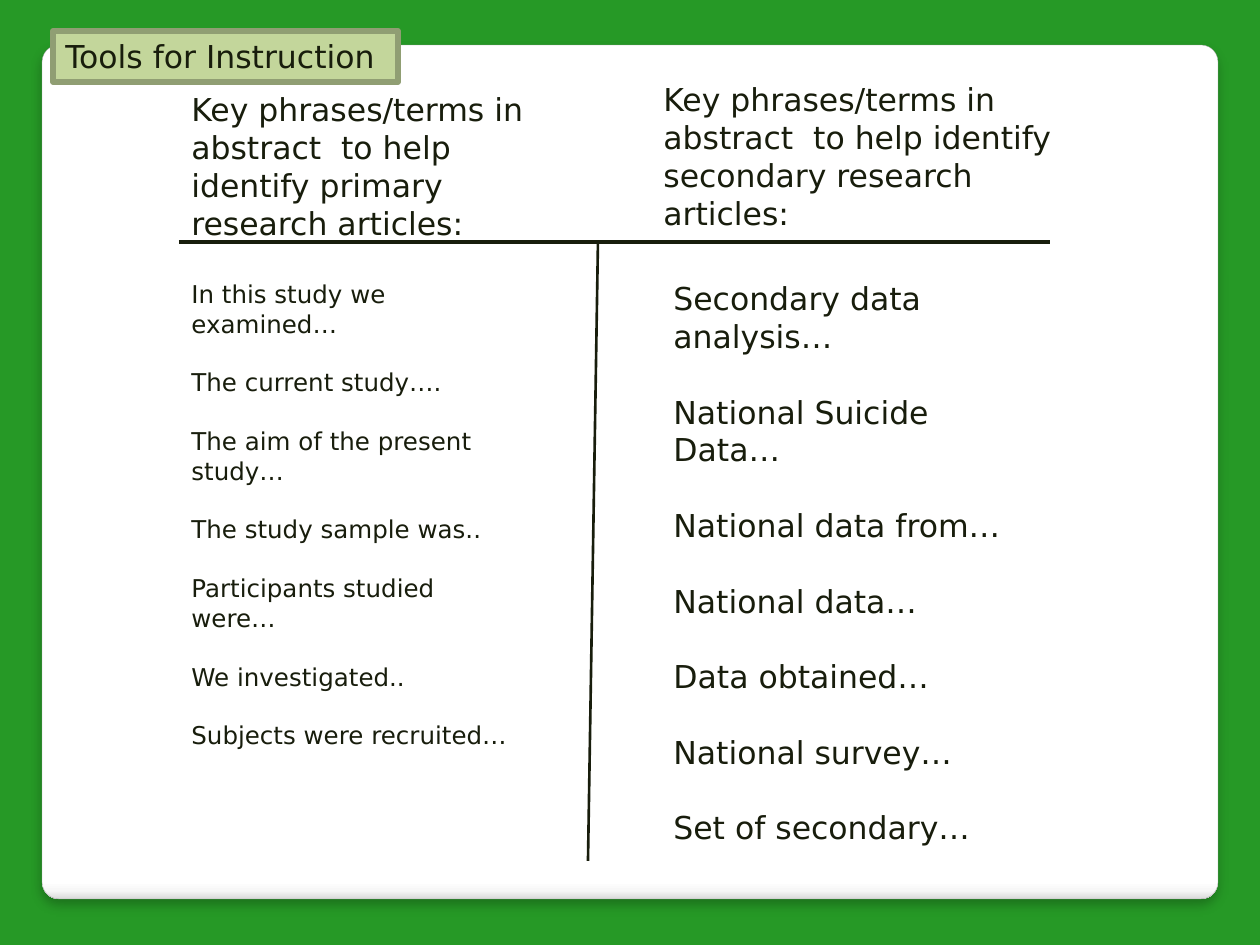
"""Build the two-column slide of phrases that identify research articles."""
from lxml.etree import SubElement
from pptx import Presentation
from pptx.dml.color import RGBColor as Color
from pptx.enum.shapes import MSO_CONNECTOR as Connector, MSO_SHAPE as Preset
from pptx.enum.text import MSO_ANCHOR as Anchor, PP_ALIGN as Align
from pptx.oxml import parse_xml
from pptx.oxml.ns import nsdecls, qn
from pptx.util import Emu, Pt

EMU_PER_PX = 914400 / 126
FONT = "DejaVu Sans"
LINE_PITCH = 1.2
COLORS = {
    "page": "269926",
    "white": "FFFFFF",
    "pale": "F7F7F7",
    "edge": "DADADA",
    "outline": "A4A4A4",
    "ink": "181D0C",
    "label": "C3D69B",
    "label_line": "909E73",
}
PANEL_STOPS = [(0, "white"), (98, "white"), (99, "pale"), (100, "edge")]
HEADING = "Key phrases/terms in abstract  to help identify {} research articles:"
PRIMARY = [
    "In this study we examined…",
    "The current study….",
    "The aim of the present study…",
    "The study sample was..",
    "Participants studied were…",
    "We investigated..",
    "Subjects were recruited…",
]
SECONDARY = [
    "Secondary data analysis…",
    "National Suicide Data…",
    "National data from…",
    "National data…",
    "Data obtained…",
    "National survey…",
    "Set of secondary…",
]


def px(*lengths):
    """Turn pixel lengths into a list of EMU lengths."""
    return [Emu(round(length * EMU_PER_PX)) for length in lengths]


def color(name):
    """Return the named colour."""
    return Color.from_string(COLORS[name])


def set_values(target, values):
    """Set each attribute of the target from a dict."""
    for name, value in values.items():
        setattr(target, name, value)


def set_line(line, name, width):
    """Give a line its colour and its width in points."""
    line.color.rgb = color(name)
    line.width = Pt(width)


def write_text(frame, texts, size, wrap=True):
    """Write spaced paragraphs, one for each text."""
    set_values(frame, {"word_wrap": wrap, "vertical_anchor": Anchor.TOP})
    for index, text in enumerate(texts):
        para = frame.add_paragraph() if index else frame.paragraphs[0]
        gap = Pt(size * LINE_PITCH) if index else Pt(0)
        set_values(para, {"alignment": Align.LEFT, "space_before": gap})
        span = para.add_run()
        span.text = text
        set_values(span.font, {"name": FONT, "size": Pt(size)})
        span.font.color.rgb = color("ink")


def add_panel(page, place):
    """Add the rounded white panel with its shaded foot and soft shadow."""
    panel = page.shapes.add_shape(Preset.ROUNDED_RECTANGLE, *px(*place))
    panel.adjustments[0] = 0.02
    set_line(panel.line, "outline", 0.16)
    panel.shadow.inherit = False
    stops = "".join(
        f'<a:gs pos="{percent * 1000}"><a:srgbClr val="{COLORS[name]}"/></a:gs>'
        for percent, name in PANEL_STOPS
    )
    properties = panel.element.spPr
    properties.find(qn("a:prstGeom")).addnext(parse_xml(
        f'<a:gradFill {nsdecls("a")} rotWithShape="1"><a:gsLst>{stops}</a:gsLst>'
        '<a:lin ang="5400000" scaled="0"/></a:gradFill>'
    ))
    properties.find(qn("a:effectLst")).append(parse_xml(
        f'<a:outerShdw {nsdecls("a")} blurRad="{Pt(6)}" dist="{Pt(4)}" '
        'dir="5400000" algn="t" rotWithShape="0"><a:srgbClr val="000000">'
        '<a:alpha val="25000"/></a:srgbClr></a:outerShdw>'
    ))


def add_rule(page, ends, width):
    """Add a straight rule between two points."""
    rule = page.shapes.add_connector(Connector.STRAIGHT, *px(*ends))
    set_line(rule.line, "ink", width)
    SubElement(rule.element.spPr, qn("a:effectLst"))


def add_text(page, place, texts, size):
    """Add a wrapped text box."""
    box = page.shapes.add_textbox(*px(*place))
    write_text(box.text_frame, texts, size)


def add_label(page, place, text):
    """Add the framed title label."""
    label = page.shapes.add_shape(Preset.RECTANGLE, *px(*place))
    label.shadow.inherit = False
    label.fill.solid()
    label.fill.fore_color.rgb = color("label")
    set_line(label.line, "label_line", 3.35)
    write_text(label.text_frame, [text], 18, wrap=False)


def main():
    """Build and save the deck."""
    deck = Presentation()
    width, height = px(1260, 945)
    set_values(deck, {"slide_width": width, "slide_height": height})
    page = deck.slides.add_slide(deck.slide_layouts[6])
    page.background.fill.solid()
    page.background.fill.fore_color.rgb = color("page")
    add_panel(page, (42, 45, 1176, 854))
    add_rule(page, (179, 242, 1050, 242), 2.25)
    add_rule(page, (598, 242, 588, 861), 1.5)
    add_text(page, (179, 84, 378, 165), [HEADING.format("primary")], 18)
    add_text(page, (651, 74, 420, 165), [HEADING.format("secondary")], 18)
    add_text(page, (179, 273, 346, 577), PRIMARY, 14)
    add_text(page, (661, 273, 357, 661), SECONDARY, 18)
    add_label(page, (53, 31, 345, 51), "Tools for Instruction")
    deck.save("out.pptx")


if __name__ == "__main__":
    main()
